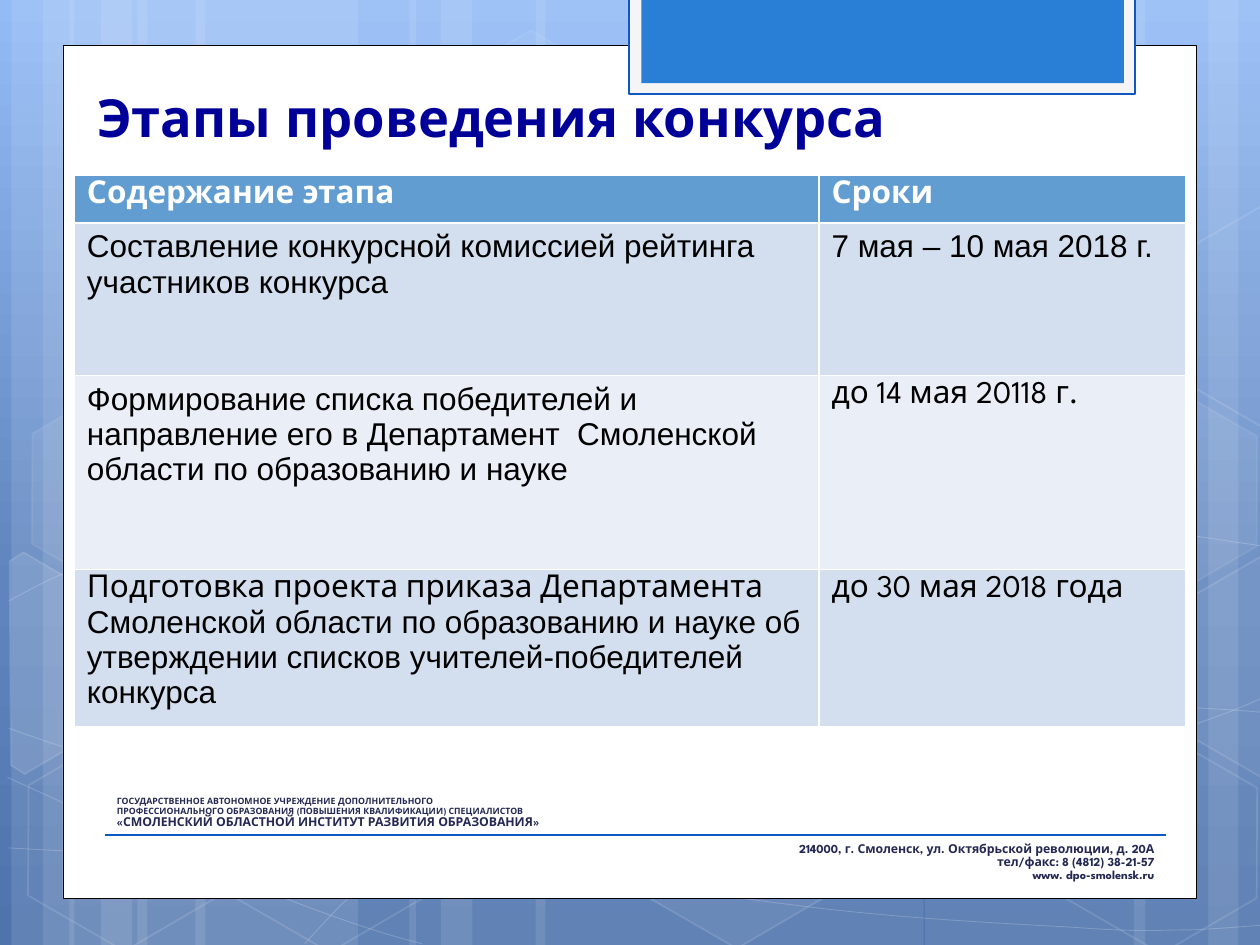
from copy import deepcopy
from math import cos, radians, sin

from lxml.etree import SubElement
from pptx import Presentation
from pptx.dml.color import RGBColor
from pptx.enum.shapes import MSO_CONNECTOR, MSO_SHAPE as SHAPE
from pptx.enum.text import MSO_ANCHOR as ANCHOR, MSO_AUTO_SIZE, PP_ALIGN as ALIGN
from pptx.oxml.ns import qn
from pptx.util import Inches, Pt

WHITE = RGBColor(0xFF, 0xFF, 0xFF)
BLACK = RGBColor(0, 0, 0)
PALE = RGBColor(0xF5, 0xF5, 0xF5)
BLUE = RGBColor(0x29, 0x7F, 0xD5)
DARK_BLUE = RGBColor(0x0E, 0x58, 0xC4)
NAVY = RGBColor(0x24, 0x28, 0x52)
TITLE_BLUE = RGBColor(0, 0, 0x99)
HEADER = RGBColor(0x62, 0x9D, 0xD1)
ROW_ODD = RGBColor(0xD3, 0xDF, 0xEE)
ROW_EVEN = RGBColor(0xEA, 0xEF, 0xF7)
SKY = [(0, RGBColor(0x93, 0xBB, 0xF6)), (0.62, RGBColor(0x60, 0x85, 0xBE)),
       (1, RGBColor(0x4F, 0x74, 0xAD))]
SPARTAN, ARIAL = "League Spartan", "Arial"


def paint(shape, fill=None, line=None, width=1, fill_alpha=100, line_alpha=100):
    """Set fill and line; the alphas are percentages of opacity."""
    shape.shadow.inherit = False
    spPr = shape.element.spPr
    if line is not None:
        shape.line.width = Pt(width)
    for part, color, alpha, where in ((shape.fill, fill, fill_alpha, "a:solidFill"),
                                      (shape.line.fill, line, line_alpha, "a:ln/a:solidFill")):
        if color is None:
            part.background()
            continue
        part.solid()
        part.fore_color.rgb = color
        if alpha < 100:
            clr = spPr.xpath(where + "/a:srgbClr")[0]
            SubElement(clr, qn("a:alpha")).set("val", str(alpha * 1000))


def add_run(p, text, color, **formats):
    r = p.add_run()
    r.text = text
    for name, value in formats.items():
        setattr(r.font, name, value)
    r.font.color.rgb = color


prs = Presentation()
prs.slide_width, prs.slide_height = Inches(10), Inches(7.5)
s = prs.slides.add_slide(prs.slide_layouts[5])
shapes = s.shapes

# Background gradient
bg = s.background.fill
bg.gradient()
bg.gradient_angle = 270
stop_list = s.element.find(".//" + qn("a:gsLst"))
while len(stop_list) < len(SKY):
    stop_list.insert(1, deepcopy(stop_list[0]))
for stop, (position, color) in zip(bg.gradient_stops, SKY):
    stop.position = position
    stop.color.rgb = color

# Vertical light bands: left, width
for x, w in [(1.09, 1.75), (0.09, 0.5), (0.34, 0.83), (1.55, 1.75), (0.55, 0.5),
             (0.8, 0.83), (7.34, 1.75), (9.59, 0.5), (9, 0.83), (4.25, 3.08),
             (3.25, 0.5), (3.5, 0.83)]:
    band = shapes.add_shape(SHAPE.RECTANGLE, Inches(x), 0, Inches(w), prs.slide_height)
    paint(band, WHITE, fill_alpha=10)

# Thin arcs: a start point, then three Bezier points per segment
ARCS = [
    [(0.07, 6.73), (0.61, 6.76), (1.15, 6.79), (1.9, 6.78), (2.65, 6.77), (3.58, 6.75),
     (4.58, 6.65), (5.58, 6.55), (7, 6.36), (7.92, 6.17), (8.83, 5.98), (9.77, 5.68),
     (10.07, 5.51)],
    [(0.07, 4.77), (0.36, 4.61), (0.65, 4.46), (1.21, 4.31), (1.78, 4.16), (2.59, 3.94),
     (3.47, 3.87), (4.36, 3.8), (5.44, 3.79), (6.54, 3.87), (7.64, 3.95), (9.47, 4.26),
     (10.07, 4.34)],
    [(0.06, 6.17), (1.27, 6.72), (2.47, 7.27), (3.35, 7.49)],
    [(0.07, 5.78), (0.38, 5.89), (0.7, 6), (1.28, 6.16), (1.86, 6.31), (2.73, 6.56),
     (3.57, 6.73), (4.4, 6.9), (5.45, 7.08), (6.28, 7.18), (7.11, 7.29), (8, 7.33),
     (8.53, 7.36), (9.06, 7.4), (9.19, 7.38), (9.45, 7.38), (9.71, 7.37), (9.89, 7.35),
     (10.07, 7.34)],
    [(2.42, 7.49), (2.6, 7.29), (2.78, 7.09), (3.02, 6.91), (3.26, 6.72), (3.6, 6.53),
     (3.88, 6.39), (4.16, 6.25), (4.33, 6.19), (4.69, 6.09), (5.06, 5.99), (5.73, 5.85),
     (6.08, 5.78), (6.44, 5.71), (6.49, 5.71), (6.8, 5.69), (7.11, 5.66), (7.6, 5.63),
     (7.94, 5.62), (8.29, 5.61), (8.86, 5.62), (8.86, 5.62), (8.86, 5.62), (9.53, 5.62),
     (9.53, 5.62), (9.71, 5.63), (9.88, 5.64), (9.97, 5.65), (10.06, 5.66), (10.03, 5.65),
     (10.06, 5.66)],
]
for arc in ARCS:
    points = [(Inches(x), Inches(y)) for x, y in arc]
    builder = shapes.build_freeform(*points[0])
    builder.add_line_segments(points[1:], close=False)
    curve = builder.convert_to_shape()
    outline = curve.element.find(".//" + qn("a:path"))
    segments = outline.findall(qn("a:lnTo"))
    for i in range(0, len(segments), 3):
        bezier = SubElement(outline, qn("a:cubicBezTo"))
        for segment in segments[i:i + 3]:
            bezier.append(segment[0])
            outline.remove(segment)
    paint(curve, None, WHITE, 0.5, line_alpha=20)

# Hexagons: left, top, fill opacity, line opacity
for x, y, fill_alpha, line_alpha in [
        (3.34, 0.36, 4, 8), (4.97, 5.89, 6, 12), (0.11, 5.91, 0, 12), (0.14, 3.12, 7, 8),
        (1.74, 5.92, 0, 12), (7.53, 4.53, 10, 12), (8.34, 5.93, 0, 12), (8.34, 3.14, 7, 8)]:
    hexagon = shapes.add_shape(SHAPE.HEXAGON, Inches(x), Inches(y), Inches(1.75), Inches(1.52))
    hexagon.adjustments[0] = 0.285
    hexagon.rotation = 30
    paint(hexagon, WHITE if fill_alpha else None, WHITE, 1, fill_alpha, line_alpha)

# Hexagons cut by the slide edges: centre, fill opacity, corners as they appear when turned
TURN = 30
c, d = cos(radians(TURN)), sin(radians(TURN))
for cx, cy, fill_alpha, corners in [
        (0.36, 5.36, 10, [(0.08, 4.45), (0.19, 4.38), (0.96, 4.83), (0.95, 5.7), (0.2, 6.14),
                          (0.09, 6.07)]),
        (9.85, 5.2, 4, [(9.26, 4.85), (10.02, 4.41), (10.09, 4.46), (10.09, 6.13),
                        (10.02, 6.17), (9.26, 5.73)]),
        (9.85, 2.41, 0, [(9.26, 2.07), (10.02, 1.63), (10.1, 1.68), (10.09, 3.35),
                         (10.02, 3.39), (9.26, 2.95)])]:
    points = [(Inches(cx + (x - cx) * c + (y - cy) * d),
               Inches(cy - (x - cx) * d + (y - cy) * c)) for x, y in corners]
    builder = shapes.build_freeform(*points[0])
    builder.add_line_segments(points[1:], close=True)
    cut = builder.convert_to_shape()
    cut.rotation = TURN
    paint(cut, WHITE if fill_alpha else None, WHITE, 1, fill_alpha, 12)

# White page and the blue tab at its top
for box, fill, line, width in [((0.5, 0.36, 9, 6.77), WHITE, BLACK, 0.5),
                               ((4.99, -0.02, 4.02, 0.77), PALE, DARK_BLUE, 1.25),
                               ((5.09, -0.02, 3.83, 0.68), BLUE, None, 0)]:
    paint(shapes.add_shape(SHAPE.RECTANGLE, *map(Inches, box)), fill, line, width)

# Footer
tf = shapes.add_textbox(Inches(0.83), Inches(6.27), Inches(8.43), Inches(0.79)).text_frame
tf.word_wrap = True
tf.vertical_anchor = ANCHOR.MIDDLE
for i, (text, size, align) in enumerate([
        ("ГОСУДАРСТВЕННОЕ АВТОНОМНОЕ УЧРЕЖДЕНИЕ ДОПОЛНИТЕЛЬНОГО", 5, ALIGN.LEFT),
        ("ПРОФЕССИОНАЛЬНОГО ОБРАЗОВАНИЯ (ПОВЫШЕНИЯ КВАЛИФИКАЦИИ) СПЕЦИАЛИСТОВ", 5, ALIGN.LEFT),
        ("«СМОЛЕНСКИЙ ОБЛАСТНОЙ ИНСТИТУТ РАЗВИТИЯ ОБРАЗОВАНИЯ»", 7, ALIGN.LEFT),
        ("214000, г. Смоленск, ул. Октябрьской революции, д. 20А", 7, ALIGN.RIGHT),
        ("тел/факс: 8 (4812) 38-21-57", 7, ALIGN.RIGHT),
        ("www. dpo-smolensk.ru", 7, ALIGN.RIGHT)]):
    p = tf.add_paragraph() if i else tf.paragraphs[0]
    p.alignment, p.line_spacing = align, 0.9
    if i == 3:
        p.space_before = Pt(7.5)
    add_run(p, text, NAVY, size=Pt(size), name=SPARTAN, bold=True)
rule = shapes.add_connector(MSO_CONNECTOR.STRAIGHT, Inches(0.83), Inches(6.63),
                            Inches(9.25), Inches(6.63))
rule.line.width = Pt(1.25)
rule.line.color.rgb = DARK_BLUE
SubElement(rule.element.spPr, qn("a:effectLst"))

# Title, brought in front of the white page
title = shapes.title
title.element.getparent().append(title.element)
title.left, title.top, title.width, title.height = map(Inches, (0.67, 0.52, 6.85, 0.81))
tf = title.text_frame
tf.auto_size, tf.vertical_anchor = MSO_AUTO_SIZE.NONE, ANCHOR.MIDDLE
p = tf.paragraphs[0]
p.alignment = ALIGN.LEFT
add_run(p, "Этапы проведения конкурса", TITLE_BLUE, size=Pt(30), name=SPARTAN, bold=True)

# Table of stages: each cell is a list of (text, font) runs
ROWS = [
    (0.38, HEADER, [[("Содержание этапа", SPARTAN)], [("Сроки", SPARTAN)]]),
    (1.21, ROW_ODD, [
        [("Составление конкурсной комиссией рейтинга участников конкурса", ARIAL)],
        [("7 мая – 10 мая 2018 г.", ARIAL)]]),
    (1.54, ROW_EVEN, [
        [("Формирование списка победителей и направление его в Департамент  Смоленской "
          "области по образованию и науке", ARIAL)],
        [("до 14 мая 20118 г.", SPARTAN)]]),
    (1.25, ROW_ODD, [
        [("Подготовка проекта приказа Департамента ", SPARTAN),
         ("Смоленской области по образованию и науке об утверждении списков "
          "учителей-победителей конкурса", ARIAL)],
        [("до 30 мая 2018 года", SPARTAN)]]),
]
table = shapes.add_table(len(ROWS), 2, Inches(0.59), Inches(1.39), Inches(8.82),
                         Inches(4.38)).table
table.columns[0].width, table.columns[1].width = Inches(5.91), Inches(2.91)
for i, (height, fill, cells) in enumerate(ROWS):
    table.rows[i].height = Inches(height)
    for cell, runs in zip(table.rows[i].cells, cells):
        cell.fill.solid()
        cell.fill.fore_color.rgb = fill
        for text, font in runs:
            add_run(cell.text_frame.paragraphs[0], text, BLACK if i else WHITE,
                    size=Pt(18), name=font, bold=i == 0)

prs.save("out.pptx")
